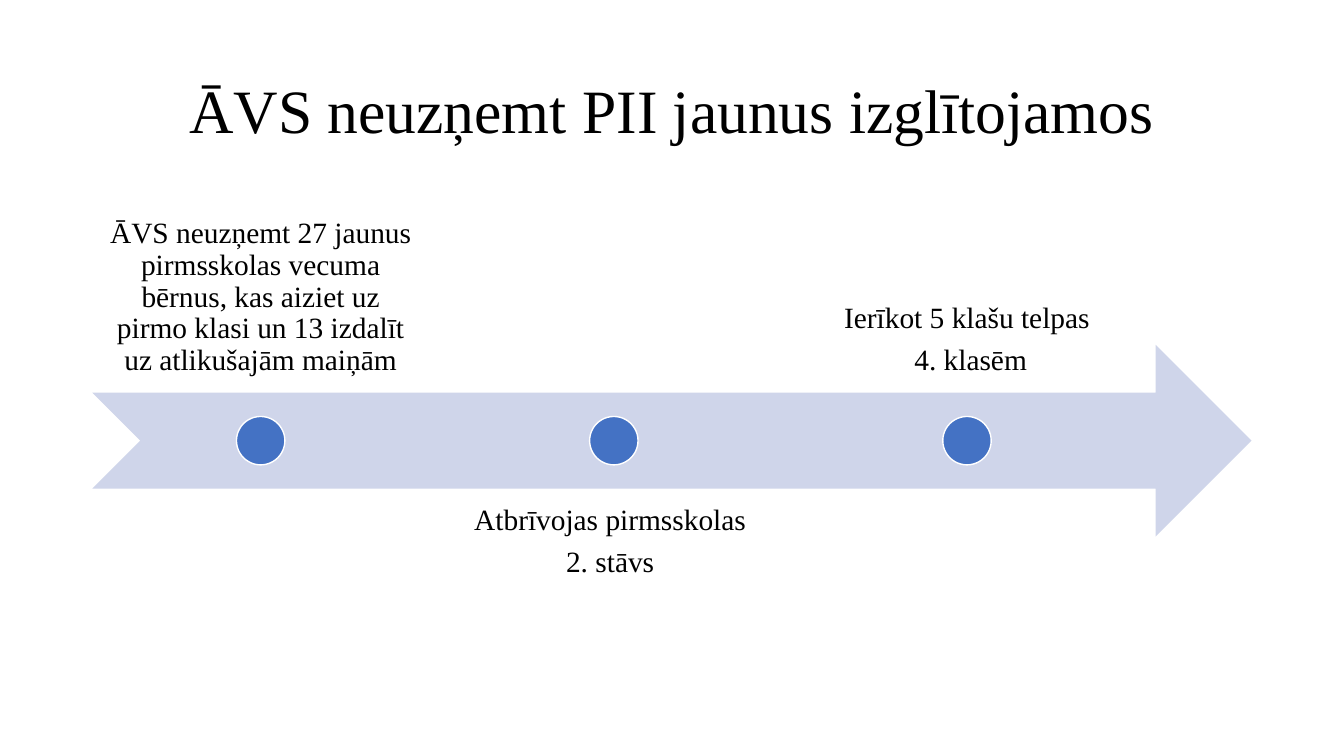
from pptx import Presentation
from pptx import util as u
from pptx.dml.color import RGBColor
from pptx.enum import shapes, text

Cm, Pt = u.Cm, u.Pt

BLACK = RGBColor(0x00, 0x00, 0x00)
WHITE = RGBColor(0xFF, 0xFF, 0xFF)
BLUE = RGBColor(0x44, 0x72, 0xC4)
PALE_BLUE = RGBColor(0xCF, 0xD5, 0xEA)
FONT = "Times New Roman"

LEFT, WIDTH = Cm(2.33), Cm(29.21)
BAND_HEIGHT = Cm(4.83)
ARROW_TOP = Cm(8.69)
ABOVE_TOP, BELOW_TOP = Cm(5.08), Cm(12.32)
STEP_WIDTH, STEP_PITCH = Cm(8.48), Cm(8.9)
DOT_SIZE = Cm(1.22)
INSET = Cm(0.41)

STEPS = [
    ["ĀVS neuzņemt 27 jaunus pirmsskolas vecuma bērnus, "
     "kas aiziet uz pirmo klasi un 13 izdalīt uz atlikušajām maiņām"],
    ["Atbrīvojas pirmsskolas ", "2. stāvs "],
    ["Ierīkot 5 klašu telpas", " 4. klasēm"],
]


def write(paragraph, words, size):
    paragraph.alignment = text.PP_ALIGN.CENTER
    paragraph.line_spacing = 0.9
    run = paragraph.add_run()
    run.text = words
    run.font.size = Pt(size)
    run.font.name = FONT
    run.font.color.rgb = BLACK


def add_heading(slide, words):
    heading = slide.shapes.title
    heading.left, heading.top = LEFT, Cm(1.01)
    heading.width, heading.height = WIDTH, Cm(3.68)
    heading.text_frame.vertical_anchor = text.MSO_ANCHOR.MIDDLE
    write(heading.text_frame.paragraphs[0], words, 44)


def add_filled(timeline, kind, left, top, width, height, colour):
    figure = timeline.shapes.add_shape(kind, left, top, width, height)
    figure.shadow.inherit = False
    figure.fill.solid()
    figure.fill.fore_color.rgb = colour
    figure.line.fill.background()
    return figure


def add_label(timeline, left, top, anchor, lines):
    label = timeline.shapes.add_textbox(left, top, STEP_WIDTH, BAND_HEIGHT)
    frame = label.text_frame
    frame.word_wrap = True
    frame.vertical_anchor = anchor
    frame.margin_left = frame.margin_right = INSET
    frame.margin_top = frame.margin_bottom = INSET
    for number, line in enumerate(lines):
        paragraph = frame.add_paragraph() if number else frame.paragraphs[0]
        paragraph.space_after = Pt(7.35)
        write(paragraph, line, 21)


def add_dot(timeline, step_left):
    left = step_left + (STEP_WIDTH - DOT_SIZE) // 2
    top = ARROW_TOP + (BAND_HEIGHT - DOT_SIZE) // 2
    dot = add_filled(timeline, shapes.MSO_SHAPE.OVAL, left, top,
                     DOT_SIZE, DOT_SIZE, BLUE)
    dot.line.color.rgb = WHITE
    dot.line.width = Pt(1)


def main():
    deck = Presentation()
    deck.slide_width, deck.slide_height = Cm(33.87), Cm(19.05)
    slide = deck.slides.add_slide(deck.slide_layouts[5])
    add_heading(slide, "ĀVS neuzņemt PII jaunus izglītojamos")

    # Timeline arrow
    timeline = slide.shapes.add_group_shape()
    add_filled(timeline, shapes.MSO_SHAPE.NOTCHED_RIGHT_ARROW,
               LEFT, ARROW_TOP, WIDTH, BAND_HEIGHT, PALE_BLUE)

    # Steps, alternating above and below the arrow
    sides = [(ABOVE_TOP, text.MSO_ANCHOR.BOTTOM),
             (BELOW_TOP, text.MSO_ANCHOR.TOP)]
    for number, lines in enumerate(STEPS):
        step_left = LEFT + number * STEP_PITCH
        top, anchor = sides[number % 2]
        add_label(timeline, step_left, top, anchor, lines)
        add_dot(timeline, step_left)

    deck.save("out.pptx")


if __name__ == "__main__":
    main()
